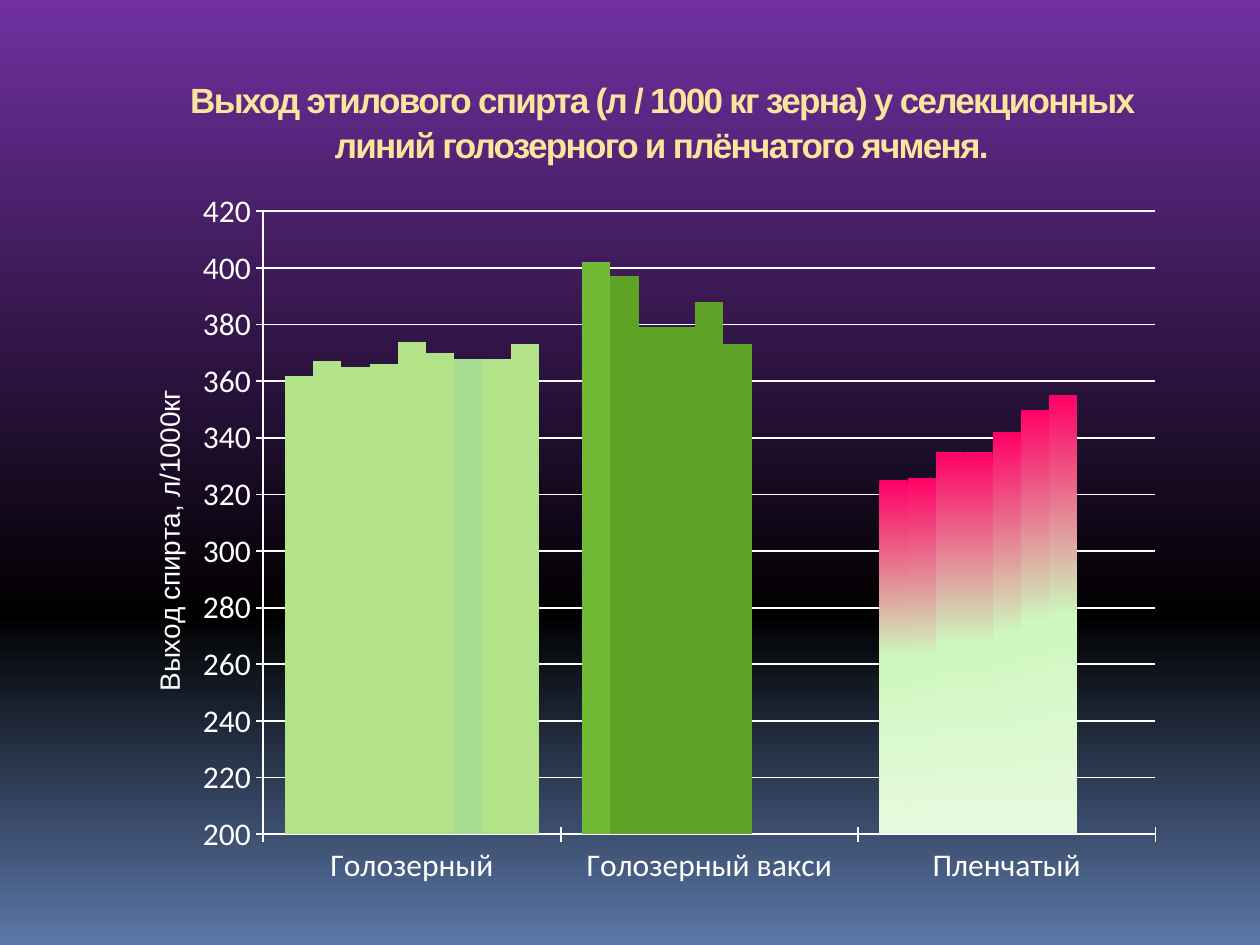
from copy import deepcopy

from lxml import etree
from pptx import Presentation
from pptx.chart.data import CategoryChartData
from pptx.dml.color import RGBColor
from pptx.enum.chart import XL_CHART_TYPE, XL_TICK_MARK
from pptx.enum.text import MSO_ANCHOR, MSO_AUTO_SIZE, PP_ALIGN
from pptx.oxml.ns import qn
from pptx.util import Inches, Pt

COLUMNS = XL_CHART_TYPE.COLUMN_CLUSTERED
CROSS = XL_TICK_MARK.CROSS
TOP = MSO_ANCHOR.TOP
NO_FIT = MSO_AUTO_SIZE.NONE
CENTER = PP_ALIGN.CENTER

WHITE = RGBColor(0xFF, 0xFF, 0xFF)
CREAM = RGBColor(0xFF, 0xE3, 0x9D)
LIGHT_GREEN = RGBColor(0xB2, 0xE3, 0x89)
MINT_GREEN = RGBColor(0xA7, 0xDD, 0x90)
LEAF_GREEN = RGBColor(0x72, 0xBA, 0x35)
DARK_GREEN = RGBColor(0x5F, 0xA3, 0x26)
BACKGROUND = [
    (0, RGBColor(0x70, 0x30, 0xA0)),
    (0.65, RGBColor(0x00, 0x00, 0x00)),
    (1, RGBColor(0x5B, 0x77, 0xA8)),
]
PINK_FADE = [
    (0, RGBColor(0xFF, 0x00, 0x66)),
    (0.5, RGBColor(0xCE, 0xF7, 0xBD)),
    (1, RGBColor(0xE7, 0xFA, 0xDF)),
]

TITLE = ("Выход этилового спирта (л / 1000 кг зерна) у селекционных "
         "линий голозерного и плёнчатого ячменя.")
AXIS_TITLE = "Выход спирта, л/1000кг"
YIELDS = {
    "Голозерный": [362, 367, 365, 366, 374, 370, 368, 368, 373],
    "Голозерный вакси": [402, 397, 379, 379, 388, 373],
    "Пленчатый": [325, 326, 335, 335, 342, 350, 355],
}
LINE_COUNT = max(len(values) for values in YIELDS.values())
GROUP_COLORS = [LIGHT_GREEN, DARK_GREEN]
# Bars that stand out from their group: (series, category)
SPECIAL_COLORS = {(0, 1): LEAF_GREEN, (6, 0): MINT_GREEN}


def fill_gradient(fill, stops):
    """Fill from top to bottom with (position, colour) stops."""
    fill.gradient()
    fill.gradient_angle = 270
    first = fill.gradient_stops[0].element
    while len(fill.gradient_stops) < len(stops):
        first.getparent().append(deepcopy(first))
    for stop, (position, color) in zip(fill.gradient_stops, stops):
        stop.position = position
        stop.color.rgb = color


def fill_solid(fill, color):
    fill.solid()
    fill.fore_color.rgb = color


def make_layout(**shares):
    """Manual chart layout, in shares of the chart's size."""
    layout = etree.Element(qn("c:layout"))
    manual = etree.SubElement(layout, qn("c:manualLayout"))
    if "w" in shares:
        etree.SubElement(manual, qn("c:layoutTarget")).set("val", "inner")
    for side in ("x", "y"):
        etree.SubElement(manual, qn(f"c:{side}Mode")).set("val", "edge")
    for name, share in shares.items():
        etree.SubElement(manual, qn(f"c:{name}")).set("val", str(share))
    return layout


def put_layout(parent, layout, before):
    """Replace the parent's layout, placing it ahead of the named child."""
    for old in parent.findall(qn("c:layout")):
        parent.remove(old)
    parent.find(qn(before)).addprevious(layout)


def set_font(font, name, size, color, bold=False):
    font.name = name
    font.size = Pt(size)
    font.color.rgb = color
    font.bold = bold


def add_title(page, left, top, width, height):
    box = page.shapes.title
    box.left, box.top, box.width, box.height = left, top, width, height
    frame = box.text_frame
    frame.text = TITLE
    frame.word_wrap = True
    frame.auto_size = NO_FIT
    frame.vertical_anchor = TOP
    para = frame.paragraphs[0]
    para.alignment = CENTER
    para.line_spacing = 1.05
    span = para.runs[0]
    set_font(span.font, "Arial", 20, CREAM, bold=True)
    span.font.element if hasattr(span.font, "element") else None
    para.runs[0].font.language_id = None
    box.element.find(".//" + qn("a:rPr")).set("spc", "-100")


def style_axes(chart):
    for axis in (chart.category_axis, chart.value_axis):
        axis.major_tick_mark = CROSS
        axis.format.line.color.rgb = WHITE
        axis.format.line.width = Pt(1)
        set_font(axis.tick_labels.font, "Calibri", 18, WHITE)
    axis = chart.value_axis
    axis.minimum_scale, axis.maximum_scale, axis.major_unit = 200, 420, 20
    axis.has_major_gridlines = True
    axis.major_gridlines.format.line.color.rgb = WHITE
    axis.major_gridlines.format.line.width = Pt(1)
    # Axis title
    title = axis.axis_title
    title.text_frame.text = AXIS_TITLE
    body = title.text_frame.paragraphs[0]
    set_font(body.runs[0].font, "Arial", 16, WHITE)
    frame = axis.axis_title.format.line
    frame.fill.background()
    title_element = chart.element.find(".//" + qn("c:valAx") + "/" + qn("c:title")) \
        if hasattr(chart, "element") else None
    if title_element is not None:
        title_element.find(".//" + qn("a:bodyPr")).set("rot", "-5400000")
        title_element.find(".//" + qn("a:bodyPr")).set("vert", "horz")
        put_layout(title_element, make_layout(x=0.03, y=0.29), "c:overlay")


def color_bars(plot):
    for number, series in enumerate(plot.series):
        fill_solid(series.format.fill, LIGHT_GREEN)
        series.invert_if_negative = False
        for group, values in enumerate(YIELDS.values()):
            if number >= len(values):
                continue
            fill = series.points[group].format.fill
            if group < len(GROUP_COLORS):
                color = SPECIAL_COLORS.get((number, group), GROUP_COLORS[group])
                fill_solid(fill, color)
            else:
                fill_gradient(fill, PINK_FADE)


def add_yield_chart(page, left, top, width, height):
    data = CategoryChartData()
    data.categories = list(YIELDS)
    for number in range(LINE_COUNT):
        data.add_series(f"Series {number + 1}", [
            values[number] if number < len(values) else None
            for values in YIELDS.values()])
    chart = page.shapes.add_chart(COLUMNS, left, top, width, height, data).chart
    chart.has_legend = False
    chart.has_title = False
    set_font(chart.font, "Calibri", 18, WHITE)
    plot = chart.plots[0]
    plot.gap_width = 150
    plot.overlap = 0
    plot.vary_by_categories = False
    style_axes(chart)
    color_bars(plot)
    plot_area = chart.element.find(".//" + qn("c:plotArea"))
    put_layout(plot_area, make_layout(x=0.14, y=0.05, w=0.84, h=0.86), "c:barChart")


def main():
    deck = Presentation()
    deck.slide_width, deck.slide_height = Inches(10), Inches(7.5)
    page = deck.slides.add_slide(deck.slide_layouts[5])
    fill_gradient(page.background.fill, BACKGROUND)
    add_yield_chart(page, Inches(0.91), Inches(1.39), Inches(8.43), Inches(5.75))
    add_title(page, Inches(1), Inches(0.56), Inches(8.5), Inches(1))
    deck.save("out.pptx")


if __name__ == "__main__":
    main()
